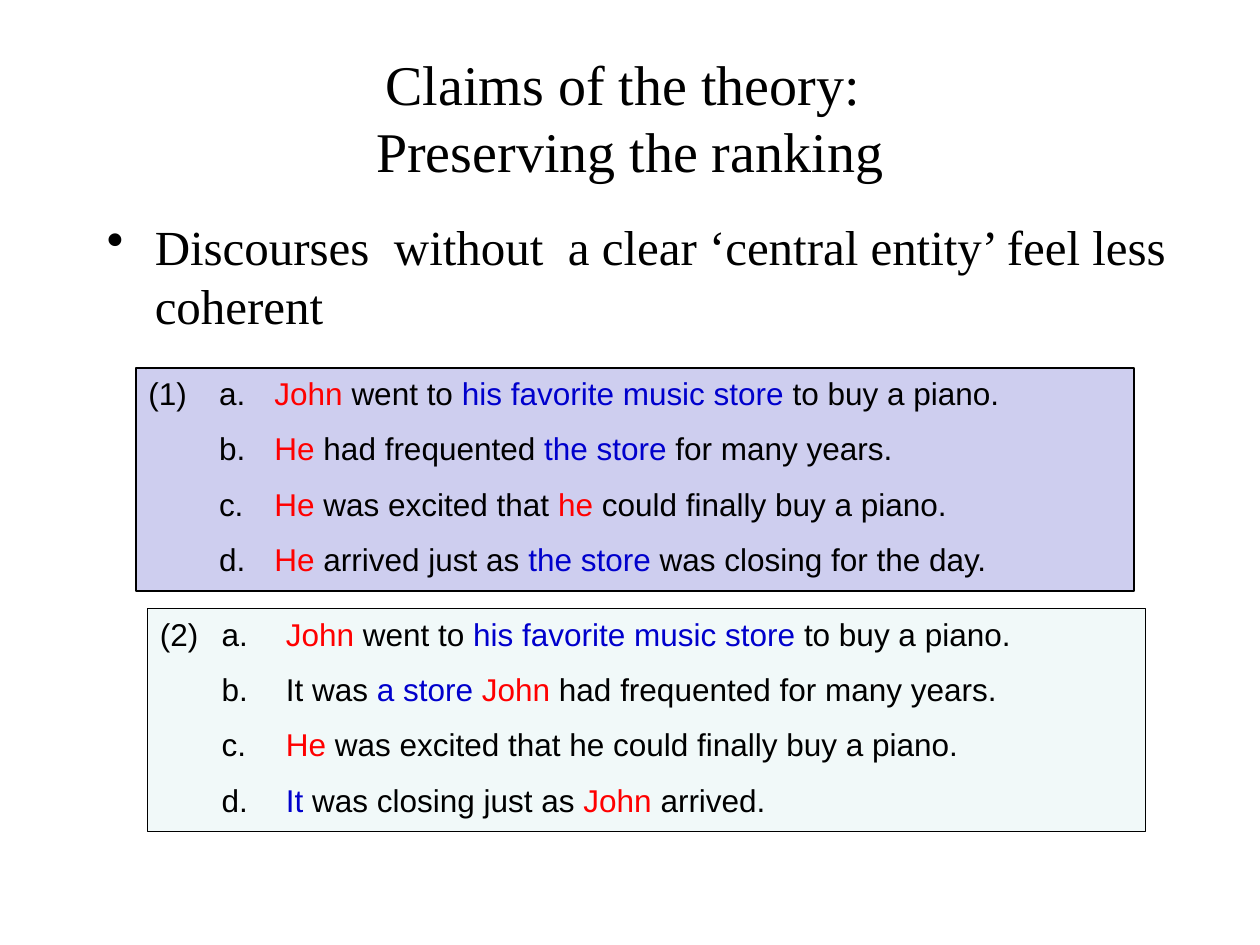
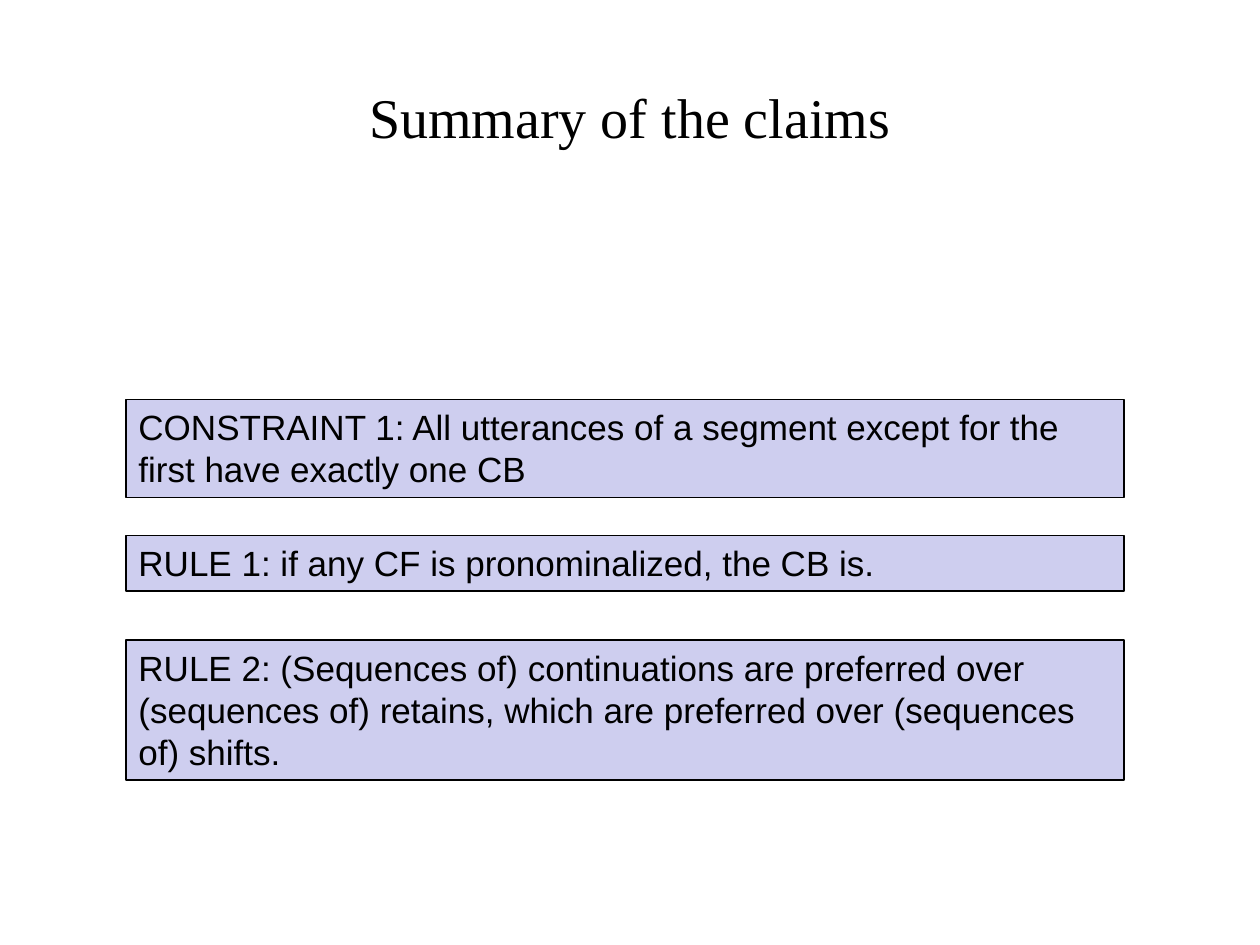
from lxml import etree
from pptx import Presentation
from pptx.dml.color import RGBColor
from pptx.enum.shapes import MSO_SHAPE
from pptx.enum.text import MSO_ANCHOR, PP_ALIGN
from pptx.oxml.ns import qn
from pptx.util import Inches, Pt

RECTANGLE = MSO_SHAPE.RECTANGLE
TOP, MIDDLE = MSO_ANCHOR.TOP, MSO_ANCHOR.MIDDLE
LEFT, CENTER = PP_ALIGN.LEFT, PP_ALIGN.CENTER

BLACK, RED, BLUE = "000000", "FF0000", "0000CC"
LAVENDER, MINT = "CECEEF", "F1F9F9"
TITLE_FONT = {"name": "Times New Roman", "size": Pt(32)}
BULLET_FONT = {"name": "Times New Roman", "size": Pt(28)}
EXAMPLE_FONT = {"name": "Arial", "size": Pt(18)}
CLAIM_FONT = {"name": "Arial", "size": Pt(20)}

TITLE_BOX = (0.5, 0.3, 9, 1.25)
PANEL_WIDTH = 7.92
SENTENCE_TAB = 1

STORE_FIRST = [("John", RED), (" went to ", BLACK),
               ("his favorite music store", BLUE), (" to buy a piano.", BLACK)]
COHERENT = [
    STORE_FIRST,
    [("He", RED), (" had frequented ", BLACK), ("the store", BLUE),
     (" for many years.", BLACK)],
    [("He", RED), (" was excited that ", BLACK), ("he", RED),
     (" could finally buy a piano.", BLACK)],
    [("He", RED), (" arrived just as ", BLACK), ("the store", BLUE),
     (" was closing for the day.", BLACK)],
]
LESS_COHERENT = [
    STORE_FIRST,
    [("It was ", BLACK), ("a store ", BLUE), ("John", RED),
     (" had frequented for many years.", BLACK)],
    [("He", RED), (" was excited that he could finally buy a piano.", BLACK)],
    [("It", BLUE), (" was closing just as ", BLACK), ("John", RED),
     (" arrived.", BLACK)],
]
CLAIMS = [
    (3.17, 0.78, "CONSTRAINT 1: All utterances of a segment except for the "
                 "first have exactly one CB"),
    (4.25, 0.44, "RULE 1: if any CF is pronominalized, the CB is."),
    (5.08, 1.11, "RULE 2: (Sequences of) continuations are preferred over "
                 "(sequences of) retains, which are preferred over "
                 "(sequences of) shifts."),
]


def colour(value):
    """Turn a hex string into a colour."""
    return RGBColor.from_string(value)


def add_span(para, text, font, tint=BLACK):
    """Add one run of text in the given font and colour."""
    span = para.add_run()
    span.text = text
    for name, value in font.items():
        setattr(span.font, name, value)
    span.font.color.rgb = colour(tint)


def add_text_box(page, box, anchor):
    """Add a wrapping text box and return its text frame."""
    frame = page.shapes.add_textbox(*map(Inches, box)).text_frame
    frame.word_wrap = True
    frame.vertical_anchor = anchor
    return frame


def add_title(page, lines):
    """Add the centred slide title, one line per item."""
    para = add_text_box(page, TITLE_BOX, MIDDLE).paragraphs[0]
    para.alignment = CENTER
    for index, line in enumerate(lines):
        if index:
            para.add_line_break()
        add_span(para, line, TITLE_FONT)


def add_bullet(page, box, text):
    """Add a bulleted statement with a hanging indent."""
    para = add_text_box(page, box, TOP).paragraphs[0]
    properties = para._p.get_or_add_pPr()
    properties.set("marL", str(Inches(0.38)))
    properties.set("indent", str(-Inches(0.38)))
    etree.SubElement(properties, qn("a:buChar"), char="•")
    add_span(para, text, BULLET_FONT)


def add_panel(page, box, fill):
    """Add an outlined rectangle and return its text frame."""
    panel = page.shapes.add_shape(RECTANGLE, *map(Inches, box))
    panel.shadow.inherit = False
    panel.fill.solid()
    panel.fill.fore_color.rgb = colour(fill)
    panel.line.color.rgb = colour(BLACK)
    panel.line.width = Pt(0.75)
    frame = panel.text_frame
    frame.word_wrap = True
    frame.vertical_anchor = TOP
    frame.paragraphs[0].alignment = LEFT
    return frame


def set_tabs(para, positions):
    """Set left tab stops, in inches from the text edge."""
    tabs = etree.SubElement(para._p.get_or_add_pPr(), qn("a:tabLst"))
    for position in positions:
        etree.SubElement(tabs, qn("a:tab"), pos=str(Inches(position)), algn="l")


def add_example(page, box, fill, number, letter_tab, sentences):
    """Add a numbered discourse whose sentences are lettered from a."""
    frame = add_panel(page, box, fill)
    for index, (letter, sentence) in enumerate(zip("abcd", sentences)):
        para = frame.add_paragraph() if index else frame.paragraphs[0]
        para.alignment = LEFT
        para.space_before = Pt(10 if index else 0)
        set_tabs(para, (letter_tab, SENTENCE_TAB))
        label = "" if index else f"({number})"
        add_span(para, f"{label}\t{letter}.\t", EXAMPLE_FONT)
        for text, tint in sentence:
            add_span(para, text, EXAMPLE_FONT, tint)


def build_ranking(page):
    """Build the slide that contrasts two discourses."""
    add_title(page, ["Claims of the theory: ", "Preserving the ranking"])
    add_bullet(page, (0.75, 1.67, 8.75, 1.1),
               "Discourses  without  a clear ‘central entity’ feel less coherent")
    add_example(page, (1.08, 2.92, PANEL_WIDTH, 1.77), LAVENDER, 1, 0.56, COHERENT)
    add_example(page, (1.17, 4.83, PANEL_WIDTH, 1.77), MINT, 2, 0.49, LESS_COHERENT)


def build_summary(page):
    """Build the slide that lists the claims."""
    add_title(page, ["Summary of the claims"])
    for top, height, text in CLAIMS:
        frame = add_panel(page, (1, top, PANEL_WIDTH, height), LAVENDER)
        add_span(frame.paragraphs[0], text, CLAIM_FONT)


def main():
    """Build and save the deck."""
    deck = Presentation()
    deck.slide_width, deck.slide_height = Inches(10), Inches(7.5)
    for build in (build_ranking, build_summary):
        build(deck.slides.add_slide(deck.slide_layouts[6]))
    deck.save("out.pptx")


if __name__ == "__main__":
    main()
